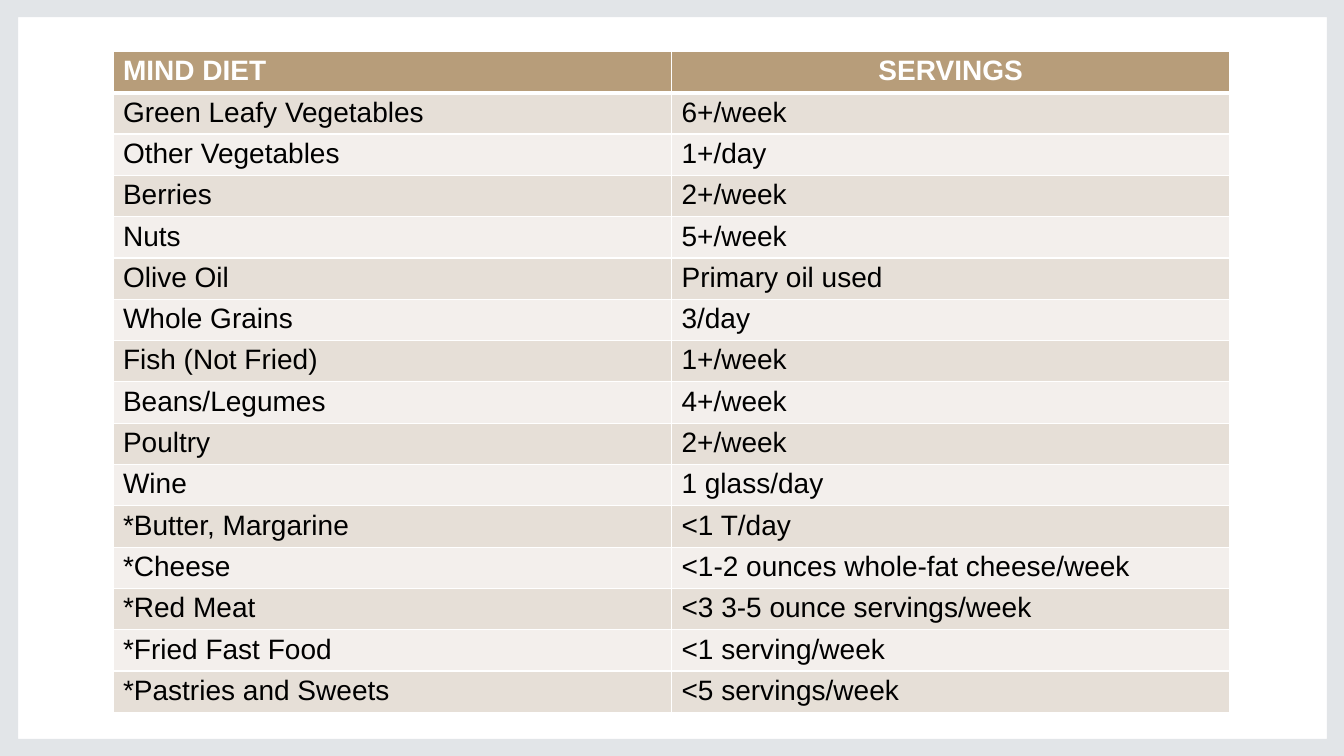
from dataclasses import dataclass

from lxml.etree import SubElement
from pptx import Presentation
from pptx.dml.color import RGBColor
from pptx.enum.text import PP_ALIGN
from pptx.oxml.ns import qn
from pptx.util import Inches, Pt


@dataclass(frozen=True)
class Theme:
    font: str = "Arial"
    size: int = 20
    frame: str = "E2E5E8"
    header: str = "B79D7A"
    bands: tuple = ("E6DFD7", "F3EFEC")
    light: str = "FFFFFF"
    dark: str = "000000"
    rule: int = 1
    header_rule: int = 3


THEME = Theme()
WIDTH, HEIGHT = 13.33, 7.5
ROW_HEIGHT, COLUMN_WIDTH = 0.41, 5.54

HEADINGS = ("MIND DIET", "SERVINGS")
SERVINGS = (
    ("Green Leafy Vegetables", "6+/week"),
    ("Other Vegetables", "1+/day"),
    ("Berries", "2+/week"),
    ("Nuts", "5+/week"),
    ("Olive Oil", "Primary oil used"),
    ("Whole Grains", "3/day"),
    ("Fish (Not Fried)", "1+/week"),
    ("Beans/Legumes", "4+/week"),
    ("Poultry", "2+/week"),
    ("Wine", "1 glass/day"),
    ("*Butter, Margarine", "<1 T/day"),
    ("*Cheese", "<1-2 ounces whole-fat cheese/week"),
    ("*Red Meat", "<3 3-5 ounce servings/week"),
    ("*Fried Fast Food", "<1 serving/week"),
    ("*Pastries and Sweets", "<5 servings/week"),
)


def rgb(color):
    return RGBColor.from_string(color)


def add_frame(slide):
    """Draw the slide border as an outer rectangle with an inner cut-out."""
    left, top, right, bottom = map(Inches, (0.18, 0.17, 13.16, 7.33))
    width, height = Inches(WIDTH), Inches(HEIGHT)
    outline = slide.shapes.build_freeform(0, 0)
    outline.add_line_segments([(width, 0), (width, height), (0, height)])
    outline.move_to(left, top)
    outline.add_line_segments([(left, bottom), (right, bottom), (right, top)])
    frame = outline.convert_to_shape()
    frame.shadow.inherit = False
    frame.fill.solid()
    frame.fill.fore_color.rgb = rgb(THEME.frame)
    frame.line.fill.background()


def set_borders(cell, top, bottom):
    """Rule all four sides; top and bottom are widths in points."""
    properties = cell._tc.get_or_add_tcPr()
    widths = {"L": THEME.rule, "R": THEME.rule, "T": top, "B": bottom}
    for side, points in widths.items():
        line = SubElement(properties, qn(f"a:ln{side}"), w=str(Pt(points)))
        fill = SubElement(line, qn("a:solidFill"))
        SubElement(fill, qn("a:srgbClr"), val=THEME.light)


def fill_cell(cell, text, row, column):
    is_header = row == 0
    set_borders(
        cell,
        top=THEME.header_rule if row == 1 else THEME.rule,
        bottom=THEME.header_rule if is_header else THEME.rule,
    )
    cell.fill.solid()
    background = THEME.header if is_header else THEME.bands[(row - 1) % 2]
    cell.fill.fore_color.rgb = rgb(background)
    cell.margin_top = cell.margin_bottom = Inches(0.04)
    paragraph = cell.text_frame.paragraphs[0]
    if is_header and column == 1:
        paragraph.alignment = PP_ALIGN.CENTER
    run = paragraph.add_run()
    run.text = text
    run.font.name = THEME.font
    run.font.size = Pt(THEME.size)
    run.font.bold = is_header
    run.font.color.rgb = rgb(THEME.light if is_header else THEME.dark)


def add_servings_table(slide, left, top):
    entries = (HEADINGS, *SERVINGS)
    table = slide.shapes.add_table(
        len(entries), len(HEADINGS), Inches(left), Inches(top),
        Inches(COLUMN_WIDTH * len(HEADINGS)), Inches(ROW_HEIGHT * len(entries)),
    ).table
    for column in table.columns:
        column.width = Inches(COLUMN_WIDTH)
    for row, entry in enumerate(entries):
        table.rows[row].height = Inches(ROW_HEIGHT)
        for column, text in enumerate(entry):
            fill_cell(table.cell(row, column), text, row, column)


def main():
    deck = Presentation()
    deck.slide_width, deck.slide_height = Inches(WIDTH), Inches(HEIGHT)
    slide = deck.slides.add_slide(deck.slide_layouts[6])
    slide.background.fill.solid()
    slide.background.fill.fore_color.rgb = rgb(THEME.light)
    add_frame(slide)
    add_servings_table(slide, left=1.12, top=0.51)
    deck.save("out.pptx")


if __name__ == "__main__":
    main()
